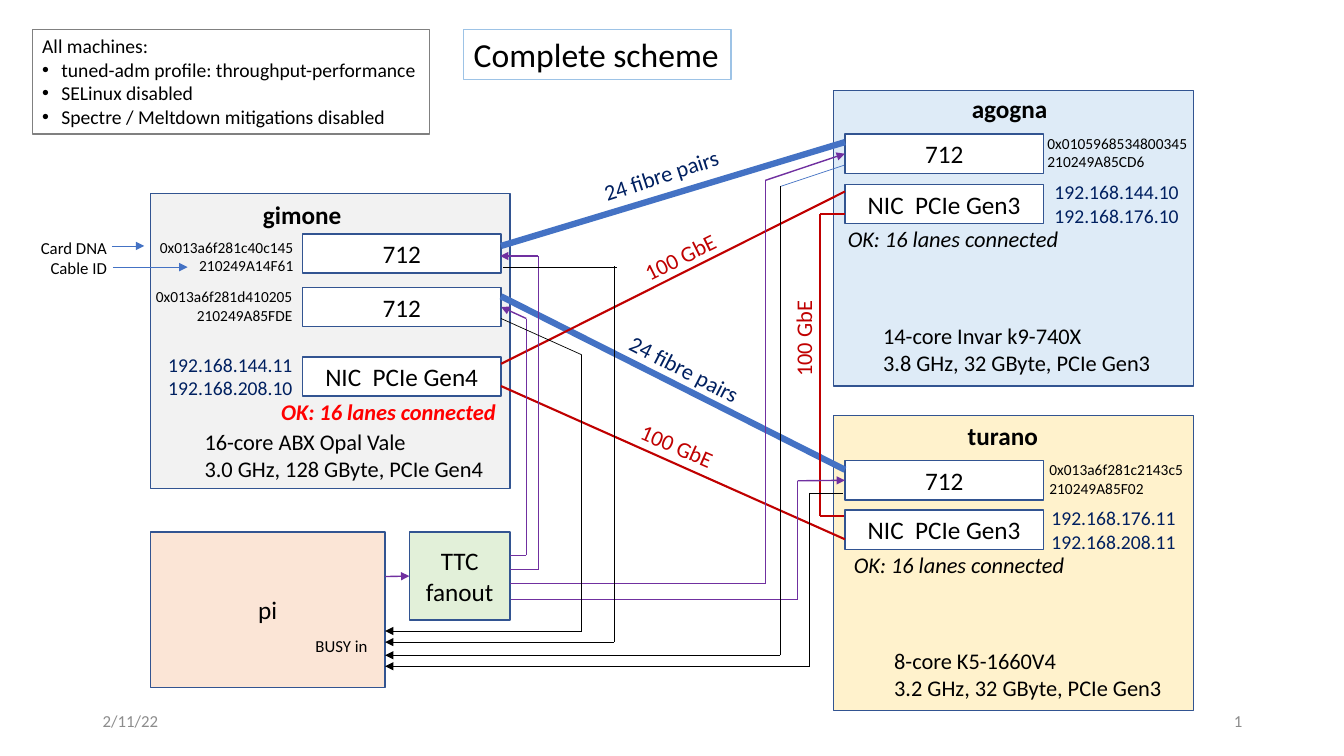
"""Build the slide showing the complete wiring scheme between three machines, the pi and the TTC fanout."""
from itertools import pairwise
from lxml.etree import SubElement
from pptx import Presentation
from pptx.dml.color import RGBColor
from pptx.enum.shapes import MSO_CONNECTOR, MSO_SHAPE
from pptx.enum.text import MSO_ANCHOR, MSO_AUTO_SIZE, PP_ALIGN
from pptx.oxml.ns import qn
from pptx.util import Inches, Pt

GRID = Inches(0.1)
BLACK, WHITE, NAVY, RED, BLUE, PURPLE = "000000", "FFFFFF", "002060", "C00000", "4472C4", "7030A0"
GREY, OUTLINE = "8C8C8C", "325491"
LEFT, CENTER, RIGHT = PP_ALIGN.LEFT, PP_ALIGN.CENTER, PP_ALIGN.RIGHT

prs = Presentation()
prs.slide_width, prs.slide_height = Inches(13.33), Inches(7.5)
slide = prs.slides.add_slide(prs.slide_layouts[6])


def block(at, text="", size=18, color=BLACK, fill=None, line=None, align=LEFT,
          bold=None, italic=None, wrap=False, anchor=MSO_ANCHOR.TOP, turn=0):
    """Place a text block, framed when a fill or line is given, at grid columns and rows."""
    place = [round(v * GRID) for v in at]
    if fill or line:
        shape = slide.shapes.add_shape(MSO_SHAPE.RECTANGLE, *place)
        shape.shadow.inherit = False
        shape.line.color.rgb = RGBColor.from_string(line)
        shape.line.width = Pt(1)
        if fill:
            shape.fill.solid()
            shape.fill.fore_color.rgb = RGBColor.from_string(fill)
        else:
            shape.fill.background()
    else:
        shape = slide.shapes.add_textbox(*place)
    shape.rotation = turn
    frame = shape.text_frame
    frame.text = text
    frame.word_wrap = wrap
    frame.vertical_anchor = anchor
    frame.auto_size = MSO_AUTO_SIZE.NONE if wrap else MSO_AUTO_SIZE.SHAPE_TO_FIT_TEXT
    for paragraph in frame.paragraphs:
        paragraph.alignment = align
        font = paragraph.font
        font.name, font.size, font.bold, font.italic = "Calibri", Pt(size), bold, italic
        font.color.rgb = RGBColor.from_string(color)
    return shape


def wire(points, color, width, arrow=False, target=None, side=1):
    """Run straight segments through the points, with an optional arrow and target at the end."""
    for start, end in pairwise(points):
        segment = slide.shapes.add_connector(
            MSO_CONNECTOR.STRAIGHT, *[round(v * GRID) for v in (*start, *end)])
        segment.line.color.rgb = RGBColor.from_string(color)
        segment.line.width = Pt(width)
        SubElement(segment._element.spPr, qn("a:effectLst"))
    if arrow:
        SubElement(segment.line._get_or_add_ln(), qn("a:tailEnd"), type="triangle")
    if target:
        segment.end_connect(target, side)


framed = dict(line=OUTLINE, align=CENTER, wrap=True, anchor=MSO_ANCHOR.MIDDLE)
machines = [
    (14.9, 19.2, "F2F2F2", 30, [(23.2, "712"), (28.5, "712"), (35.4, "NIC  PCIe Gen4")]),
    (82.7, 9, "DEEBF7", 83.8, [(13.3, "712"), (18.3, "NIC  PCIe Gen3")]),
    (82.7, 41.2, "FFF2CC", 83.8, [(45.7, "712"), (50.6, "NIC  PCIe Gen3")]),
]
cards = []
for left, top, fill, card_left, slots in machines:
    block((left, top, 35.7, 29.3), fill=fill, **framed)
    cards.append([block((card_left, row, 19.7, 3.9), name, fill=WHITE, **framed)
                  for row, name in slots])
gimone_cards, agogna_cards, turano_cards = cards
block((14.9, 52.8, 23.3, 15.4), "pi", fill="FBE5D6", **framed)

for fibre in ([(49.7, 24.4), (83.8, 14.1)], [(49.7, 29.4), (83.8, 46.6)]):
    wire(fibre, BLUE, 4.5)
for ethernet in ([(49.7, 36.1), (83.8, 19)], [(49.7, 38.3), (83.8, 53.5)],
                 [(83.8, 21.2), (81.3, 21.2), (81.3, 51.2), (83.7, 51.2)]):
    wire(ethernet, RED, 1.5)

fanout = block((40.6, 52.8, 10, 8.7), "TTC fanout", fill="E2F0D9", **framed)
wire([(38.2, 57.2), (40.6, 57.2)], PURPLE, 1, True, fanout)
wire([(50.6, 55.1), (52.2, 55.1), (52.2, 31.6), (49.7, 30.5)], PURPLE, 1, True, gimone_cards[1], 3)
wire([(50.6, 56.5), (53.4, 56.5), (53.4, 25.4), (49.6, 25.4)], PURPLE, 1, True)
wire([(50.6, 57.9), (75.9, 57.9), (75.9, 17.9), (83.8, 15.2)], PURPLE, 1, True, agogna_cards[0])
wire([(50.7, 59.5), (79.1, 59.5), (79.1, 47.7), (83.8, 47.7)], PURPLE, 1, True, turano_cards[0])

wire([(49.9, 26.5), (61.2, 26.5)], BLACK, 0.25)
wire([(83.7, 16.4), (77.4, 18.5)], BLUE, 0.5)
for busy in ([(49.7, 31.6), (57.7, 35.2), (57.7, 62.6), (38.2, 62.6)],
             [(60.9, 26.4), (60.9, 63.7), (38.2, 63.7)],
             [(77.4, 18.5), (77.4, 65), (38.2, 65)],
             [(83.6, 48.9), (80.3, 48.9), (80.3, 66.1), (38.2, 66.1)]):
    wire(busy, BLACK, 0.5, True)
for pointer in ([(11.1, 24.4), (14.3, 24.4)], [(11.2, 26.5), (18.6, 26.5)]):
    wire(pointer, BLUE, 0.5, True)

for at, name in [((25.1, 19.3, 9.8, 4), "gimone"), ((95.4, 8.8, 9.6, 4), "agogna"),
                 ((95, 41.2, 9, 4), "turano")]:
    block(at, name, bold=True)
for at, processor in [
    ((19.3, 42, 30.1, 6.4), "16-core ABX Opal Vale\n3.0 GHz, 128 GByte, PCIe Gen4"),
    ((86.6, 31.5, 28.9, 6.4), "14-core Invar k9-740X\n3.8 GHz, 32 GByte, PCIe Gen3"),
    ((87.7, 63.7, 28.9, 6.4), "8-core K5-1660V4\n3.2 GHz, 32 GByte, PCIe Gen3"),
]:
    block(at, processor, 16)
for left, top, turn in [(58.7, 15.5, 341.9), (61, 34.8, 27.3)]:
    block((left, top, 13.9, 3.7), "24 fibre pairs", 16, NAVY, turn=turn)
for left, top, turn in [(62.7, 23.6, 333.5), (62.4, 42.4, 23.5), (74.9, 31.7, 270)]:
    block((left, top, 9.6, 3.7), "100 GbE", 16, RED, turn=turn)
for left, top, width, color, bold in [(83.1, 21.8, 23.2, BLACK, None),
                                      (83.7, 54.2, 23.2, BLACK, None),
                                      (26.9, 39, 26, "FF0000", True)]:
    block((left, top, width, 3.7), "OK: 16 lanes connected", 16, color,
          bold=bold, italic=True, wrap=True)
for at, addresses in [
    ((15.7, 34.5, 14.5, 5.7), "192.168.144.11\n192.168.208.10"),
    ((103.3, 49.7, 15, 5.7), "192.168.176.11\n192.168.208.11"),
    ((103.6, 17.4, 14.5, 5.7), "192.168.144.10\n192.168.176.10"),
]:
    block(at, addresses, 14, NAVY)
for at, identifiers, align in [
    ((102.9, 12.8, 16.1, 4.7), "0x0105968534800345\n210249A85CD6", LEFT),
    ((103.1, 45.2, 15.4, 4.7), "0x013a6f281c2143c5\n210249A85F02", LEFT),
    ((14.3, 23.1, 15.8, 4.7), "0x013a6f281c40c145\n210249A14F61", RIGHT),
    ((13.9, 28, 16.1, 4.7), "0x013a6f281d410205\n210249A85FDE", RIGHT),
]:
    block(at, identifiers, 11, align=align)
block((30.3, 62.6, 7.2, 3), "BUSY in", 12)
block((1.6, 23.1, 10, 5), "Card DNA\nCable ID", 12, align=RIGHT, wrap=True)

block((46, 2.9, 26.5, 5), "Complete scheme", 24, line="9DC3E6")
settings = block((3.2, 2.9, 39.4, 10.4), "All machines:\ntuned-adm profile: throughput-performance\n"
                 "SELinux disabled\nSpectre / Meltdown mitigations disabled", 14, line="808080")
for item in settings.text_frame.paragraphs[1:]:
    properties = item._p.get_or_add_pPr()
    properties.set("marL", str(Inches(0.19)))
    properties.set("indent", str(-Inches(0.19)))
    properties.insert(0, SubElement(properties, qn("a:buChar"), char="•"))
    properties.insert(0, SubElement(properties, qn("a:buFont"), typeface="Arial"))

for left, text, align in [(9.2, "2/11/22", LEFT), (94.2, "1", RIGHT)]:
    block((left, 69.5, 30, 4), text, 12, GREY, align=align, wrap=True, anchor=MSO_ANCHOR.MIDDLE)
prs.save("out.pptx")
